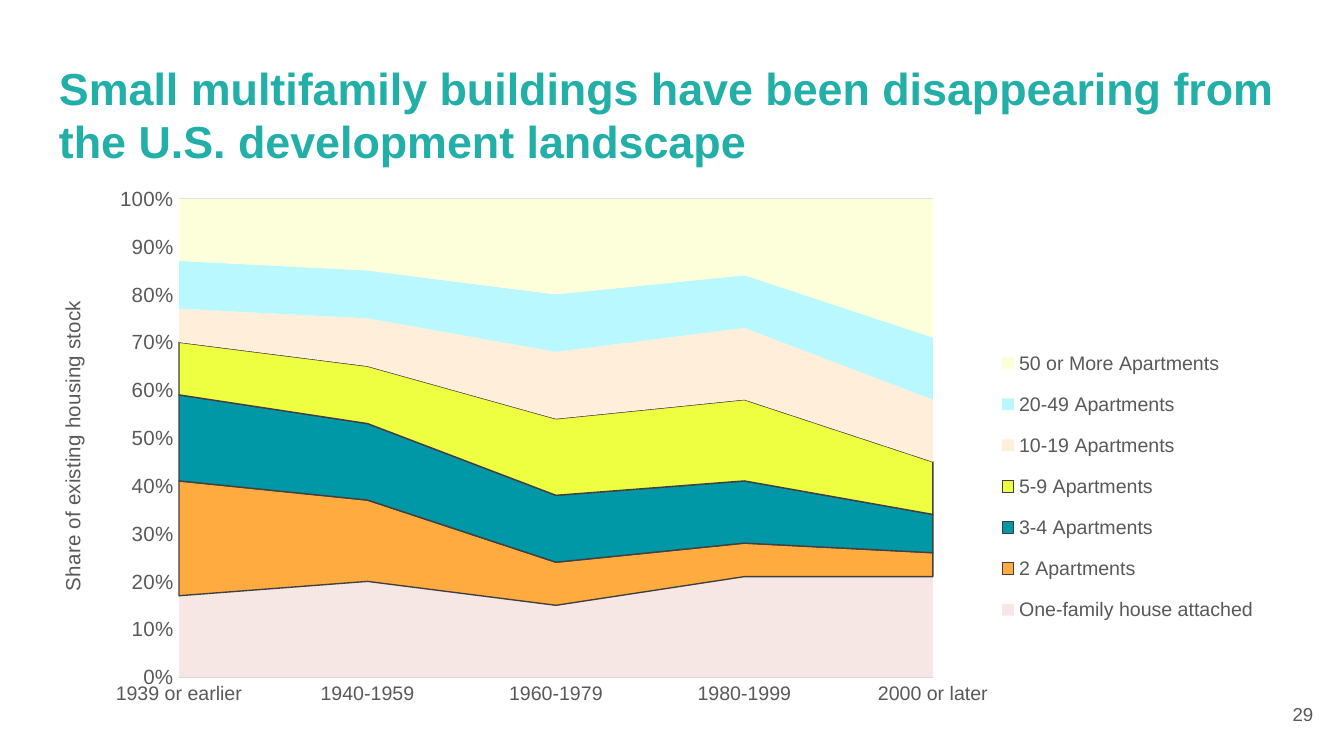
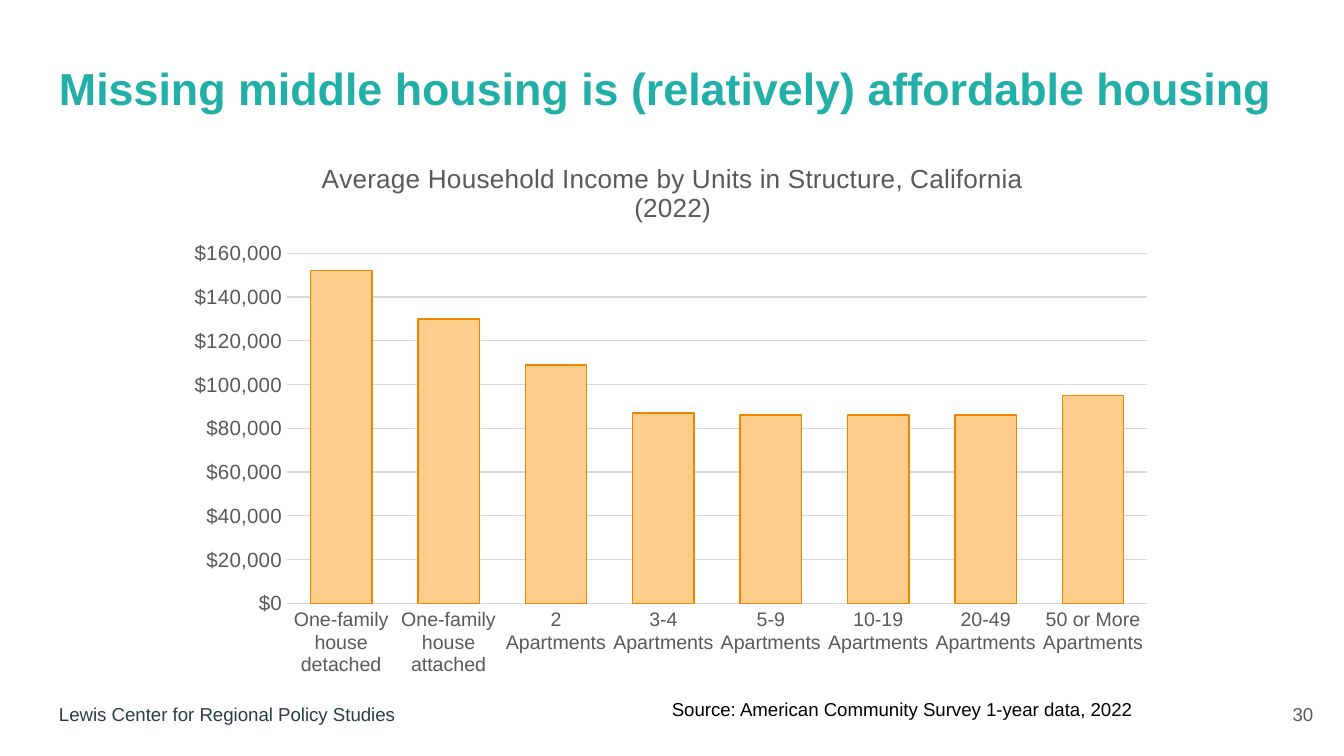
from pptx import Presentation
from pptx.chart.data import CategoryChartData
from pptx.dml.color import RGBColor
from pptx.enum.chart import XL_CHART_TYPE, XL_LEGEND_POSITION, XL_TICK_MARK
from pptx.enum.text import MSO_ANCHOR, PP_ALIGN
from pptx.oxml import parse_xml
from pptx.oxml.ns import nsdecls
from pptx.util import Pt

FONT = "Arial"
TEAL = RGBColor(0x21, 0xAF, 0xA8)
GRAY = RGBColor(0x59, 0x59, 0x59)
SLATE = RGBColor(0x29, 0x3D, 0x44)
BLACK = RGBColor(0, 0, 0)
GRID = RGBColor(0xD9, 0xD9, 0xD9)
OUTLINE = RGBColor(0x40, 0x40, 0x40)
BAR_FILL = RGBColor(0xFF, 0xCD, 0x8C)
BAR_LINE = RGBColor(0xEF, 0x86, 0x00)
ROSE = RGBColor(0xF6, 0xE7, 0xE4)
ORANGE = RGBColor(0xFF, 0xAB, 0x40)
DEEP_TEAL = RGBColor(0x00, 0x97, 0xA7)
LIME = RGBColor(0xEE, 0xFF, 0x41)
PEACH = RGBColor(0xFF, 0xEE, 0xD9)
SKY = RGBColor(0xBA, 0xF8, 0xFF)
CREAM = RGBColor(0xFC, 0xFF, 0xD9)

FOOTER_TOP, FOOTER_HEIGHT = 367.2, 31

PERIODS = ["1939 or earlier", "1940-1959", "1960-1979", "1980-1999", "2000 or later"]
ATTACHED = "One-family house attached"
APARTMENTS = [
    f"{units} Apartments" for units in ("2", "3-4", "5-9", "10-19", "20-49", "50 or More")
]
STOCK_SHARES = [
    (17, 20, 15, 21, 21),
    (24, 17, 9, 7, 5),
    (18, 16, 14, 13, 8),
    (11, 12, 16, 17, 11),
    (7, 10, 14, 15, 13),
    (10, 10, 12, 11, 13),
    (13, 15, 20, 16, 29),
]
STOCK_STYLES = [
    (ROSE, None),
    (ORANGE, OUTLINE),
    (DEEP_TEAL, OUTLINE),
    (LIME, OUTLINE),
    (PEACH, None),
    (SKY, None),
    (CREAM, None),
]
INCOMES = [152000, 130000, 109000, 87000, 86000, 86000, 86000, 95000]


def set_font(font, size, color, bold=False):
    font.name = FONT
    font.size = Pt(size)
    font.bold = bold
    font.color.rgb = color


def add_text(page, frame, text, size, color, bold=False,
             align=PP_ALIGN.LEFT, anchor=MSO_ANCHOR.MIDDLE):
    box = page.shapes.add_textbox(*map(Pt, frame))
    text_frame = box.text_frame
    text_frame.word_wrap = True
    text_frame.vertical_anchor = anchor
    text_frame.margin_left = text_frame.margin_right = Pt(7.2)
    text_frame.margin_top = text_frame.margin_bottom = Pt(7.2)
    text_frame.text = text
    para = text_frame.paragraphs[0]
    para.alignment = align
    set_font(para.runs[0].font, size, color, bold)


def add_page(deck, title, number):
    page = deck.slides.add_slide(deck.slide_layouts[6])
    add_text(page, (24.5, 25.2, 671, 45.4), title, 24, TEAL, True, anchor=MSO_ANCHOR.TOP)
    add_text(page, (667.4, FOOTER_TOP, 43.2, FOOTER_HEIGHT), str(number), 10, GRAY,
             align=PP_ALIGN.RIGHT)
    return page


def place(element, left, top, width, height, inner=False):
    for old in element.findall("{*}layout"):
        element.remove(old)
    target = '<c:layoutTarget val="inner"/>' if inner else ""
    layout = parse_xml(
        f'<c:layout {nsdecls("c")}><c:manualLayout>{target}'
        '<c:xMode val="edge"/><c:yMode val="edge"/>'
        f'<c:x val="{left}"/><c:y val="{top}"/><c:w val="{width}"/><c:h val="{height}"/>'
        "</c:manualLayout></c:layout>"
    )
    element.insert(0 if inner else 1, layout)


def style_axis(axis, size):
    axis.major_tick_mark = axis.minor_tick_mark = XL_TICK_MARK.NONE
    set_font(axis.tick_labels.font, size, GRAY)


def set_caption(owner, text, size):
    text_frame = owner.text_frame
    text_frame.text = text
    set_font(text_frame.paragraphs[0].runs[0].font, size, GRAY)


def add_chart(page, kind, frame, plot_area, categories, series, styles, number_format):
    data = CategoryChartData()
    data.categories = categories
    for name, values in series:
        data.add_series(name, values)
    chart = page.shapes.add_chart(kind, *map(Pt, frame), data).chart
    set_font(chart.font, 10, BLACK)
    chart.has_title = chart.has_legend = False
    place(chart.plots[0]._element.getparent(), *plot_area, inner=True)
    chart.plots[0].vary_by_categories = False

    for item, (fill, line) in zip(chart.plots[0].series, styles):
        item.format.fill.solid()
        item.format.fill.fore_color.rgb = fill
        if line is None:
            item.format.line.fill.background()
        else:
            item.format.line.color.rgb = line
            item.format.line.width = Pt(0.75)

    style_axis(chart.category_axis, 10.5)
    style_axis(chart.value_axis, 11)
    chart.value_axis.has_major_gridlines = True
    for line in (chart.category_axis.format.line, chart.value_axis.major_gridlines.format.line):
        line.color.rgb = GRID
        line.width = Pt(0.75)
    chart.value_axis.format.line.fill.background()
    chart.value_axis.tick_labels.number_format = number_format
    chart.value_axis.tick_labels.number_format_is_linked = False
    return chart


def add_stock_chart(page):
    chart = add_chart(
        page, XL_CHART_TYPE.AREA_STACKED_100, (15.1, 95, 673.2, 288), (0.12, 0.04, 0.6, 0.89),
        PERIODS, zip([ATTACHED] + APARTMENTS, STOCK_SHARES), STOCK_STYLES, "0%",
    )
    set_caption(chart.value_axis.axis_title, "Share of existing housing stock", 11)
    chart.has_legend = True
    chart.legend.position = XL_LEGEND_POSITION.RIGHT
    chart.legend.include_in_layout = False
    set_font(chart.legend.font, 10.5, GRAY)
    place(chart.legend._element, 0.76, 0.29, 0.23, 0.57)


def add_income_chart(page):
    chart = add_chart(
        page, XL_CHART_TYPE.COLUMN_CLUSTERED, (95.8, 74.2, 529.2, 293), (0.11, 0.21, 0.87, 0.64),
        ["One-family house detached", ATTACHED] + APARTMENTS,
        [("Series 1", INCOMES)], [(BAR_FILL, BAR_LINE)], '"$"#,##0',
    )
    chart.plots[0].gap_width = 75
    chart.value_axis.minimum_scale = 0
    chart.value_axis.maximum_scale = 160000
    chart.value_axis.major_unit = 20000
    chart.has_title = True
    set_caption(chart.chart_title,
                "Average Household Income by Units in Structure, California (2022)", 14)
    chart.chart_title.include_in_layout = False


def main():
    deck = Presentation()
    deck.slide_width, deck.slide_height = Pt(720), Pt(405)

    page = add_page(
        deck,
        "Small multifamily buildings have been disappearing from the U.S. development landscape",
        29,
    )
    add_stock_chart(page)

    page = add_page(deck, "Missing middle housing is (relatively) affordable housing", 30)
    add_text(page, (24.5, FOOTER_TOP, 205.2, FOOTER_HEIGHT),
             "Lewis Center for Regional Policy Studies", 10, SLATE)
    add_income_chart(page)
    add_text(page, (352.8, 368, 361.4, FOOTER_HEIGHT),
             "Source: American Community Survey 1-year data, 2022", 10, BLACK,
             anchor=MSO_ANCHOR.TOP)

    deck.save("out.pptx")


if __name__ == "__main__":
    main()
